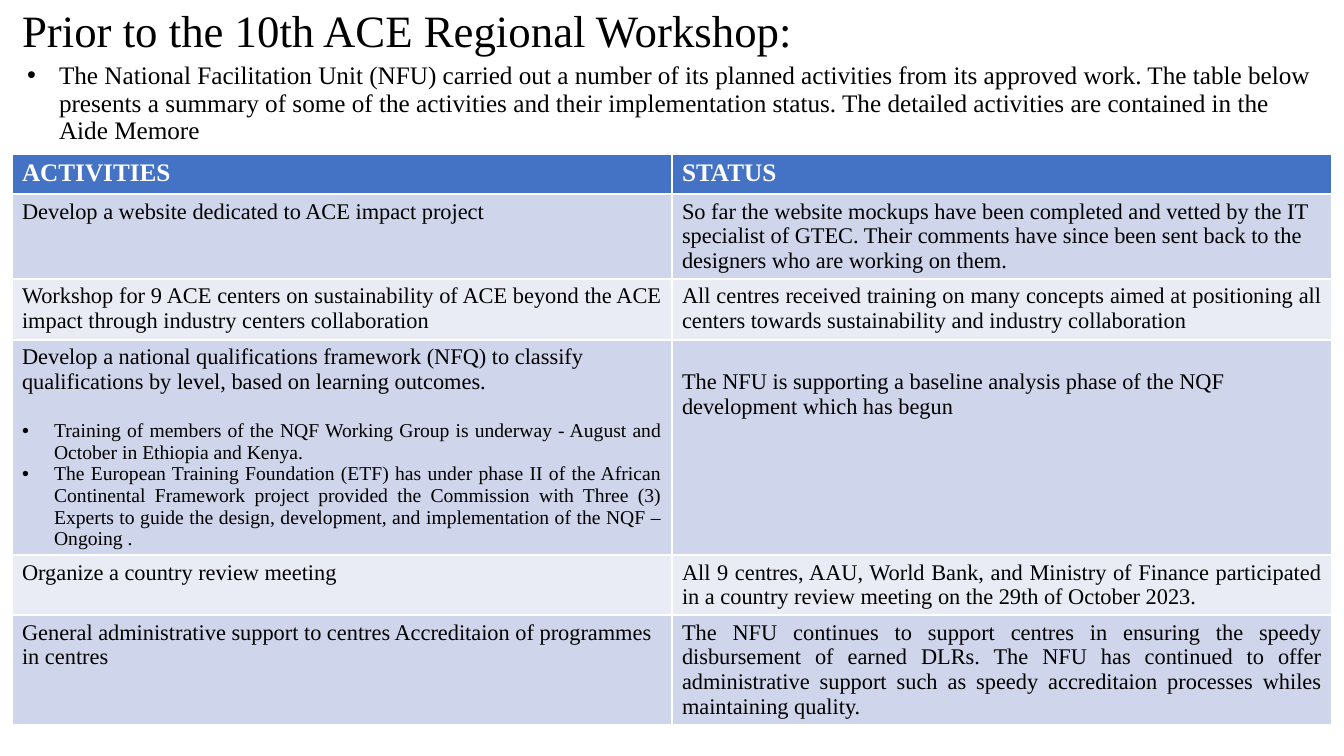
"""Builds the slide on National Facilitation Unit activities before the workshop."""
from lxml.etree import SubElement
from pptx import Presentation
from pptx.dml.color import RGBColor
from pptx.enum.text import MSO_ANCHOR as ANCHOR, MSO_AUTO_SIZE as FIT, PP_ALIGN as AL
from pptx.oxml.ns import qn
from pptx.util import Pt

PX = 12192000 / 1344
COLORS = {"text": "000000", "white": "FFFFFF", "header": "4472C4",
          "dark": "CFD5EA", "light": "E9EBF5"}


def px(n):
    return round(n * PX)


def write(p, text, size=16, color="text", bold=False, align=AL.LEFT,
          before=0, spacing=1.0, bullet=False):
    p.alignment = align
    p.space_before = Pt(before)
    p.line_spacing = spacing
    r = p.add_run()
    r.text = text
    r.font.name = "Times New Roman"
    r.font.size = Pt(size)
    r.font.bold = bold
    r.font.color.rgb = RGBColor.from_string(COLORS[color])
    if bullet:
        pPr = p._p.get_or_add_pPr()
        pPr.set("marL", str(px(32)))
        pPr.set("indent", str(px(-32)))
        SubElement(pPr, qn("a:buFont"), typeface="Arial")
        SubElement(pPr, qn("a:buChar"), char="•")


prs = Presentation()
prs.slide_width, prs.slide_height = px(1344), px(756)
s = prs.slides.add_slide(prs.slide_layouts[1])

title, body = s.shapes.title, s.placeholders[1]
for sp, box in ((title, (12, 0, 803, 62)), (body, (17, 58, 1309, 606))):
    sp.left, sp.top, sp.width, sp.height = map(px, box)
    sp.text_frame.auto_size = FIT.NONE
title.text_frame.vertical_anchor = ANCHOR.BOTTOM
write(title.text_frame.paragraphs[0], "Prior to the 10th ACE Regional Workshop:",
      size=32, spacing=0.9)
write(body.text_frame.paragraphs[0],
      "The National Facilitation Unit (NFU) carried out a number of its planned activities "
      "from its approved work. The table below presents a summary of some of the activities "
      "and their implementation status. The detailed activities are contained in the Aide Memore",
      size=18, before=10, spacing=0.9, bullet=True)

HEAD = {"size": 18, "color": "white", "bold": True}
JUST = {"align": AL.JUSTIFY}
ITEM = {"size": 14, "align": AL.JUSTIFY, "bullet": True}
rows = [
    (40, [("ACTIVITIES", HEAD)], [("STATUS", HEAD)]),
    (85, [("Develop a website dedicated to ACE impact project", {})],
     [("So far the website mockups have been completed and vetted by the IT specialist of GTEC. "
       "Their comments have since been sent back to the designers who are working on them.", {})]),
    (61, [("Workshop for 9 ACE centers on sustainability of ACE beyond the ACE impact "
           "through industry centers collaboration", JUST)],
     [("All centres received training on many concepts aimed at positioning all centers "
       "towards sustainability and industry collaboration", JUST)]),
    (214, [("Develop a national qualifications framework (NFQ) to classify qualifications "
            "by level, based on learning outcomes.", {}),
           ("Training of members of the NQF Working Group is underway - August and October "
            "in Ethiopia and Kenya.", {**ITEM, "before": 18}),
           ("The European Training Foundation (ETF) has under phase II of the African "
            "Continental Framework project provided the Commission with Three (3) Experts to "
            "guide the design, development, and implementation of the NQF – Ongoing .", ITEM)],
     [("The NFU is supporting a baseline analysis phase of the NQF development "
       "which has begun", {})]),
    (60, [("Organize a country review meeting", {})],
     [("All 9 centres, AAU, World Bank, and Ministry of Finance participated in a country "
       "review meeting on the 29th of October 2023.", JUST)]),
    (109, [("General administrative support to centres Accreditaion of programmes in centres", {})],
     [("The NFU continues to support centres in ensuring the speedy disbursement of earned DLRs. "
       "The NFU has continued to offer administrative support such as speedy accreditaion "
       "processes whiles maintaining quality.", JUST)]),
]

height = sum(row[0] for row in rows)
table = s.shapes.add_table(len(rows), 2, px(12), px(154), px(1320), px(height)).table
for i, (row_height, *cells) in enumerate(rows):
    table.rows[i].height = px(row_height)
    fill = "header" if i == 0 else "dark" if i % 2 else "light"
    for j, paragraphs in enumerate(cells):
        cell = table.cell(i, j)
        cell.fill.solid()
        cell.fill.fore_color.rgb = RGBColor.from_string(COLORS[fill])
        tf = cell.text_frame
        for k, (text, style) in enumerate(paragraphs):
            write(tf.add_paragraph() if k else tf.paragraphs[0], text, **style)
table.cell(3, 1).margin_top = px(30)

prs.save("out.pptx")
